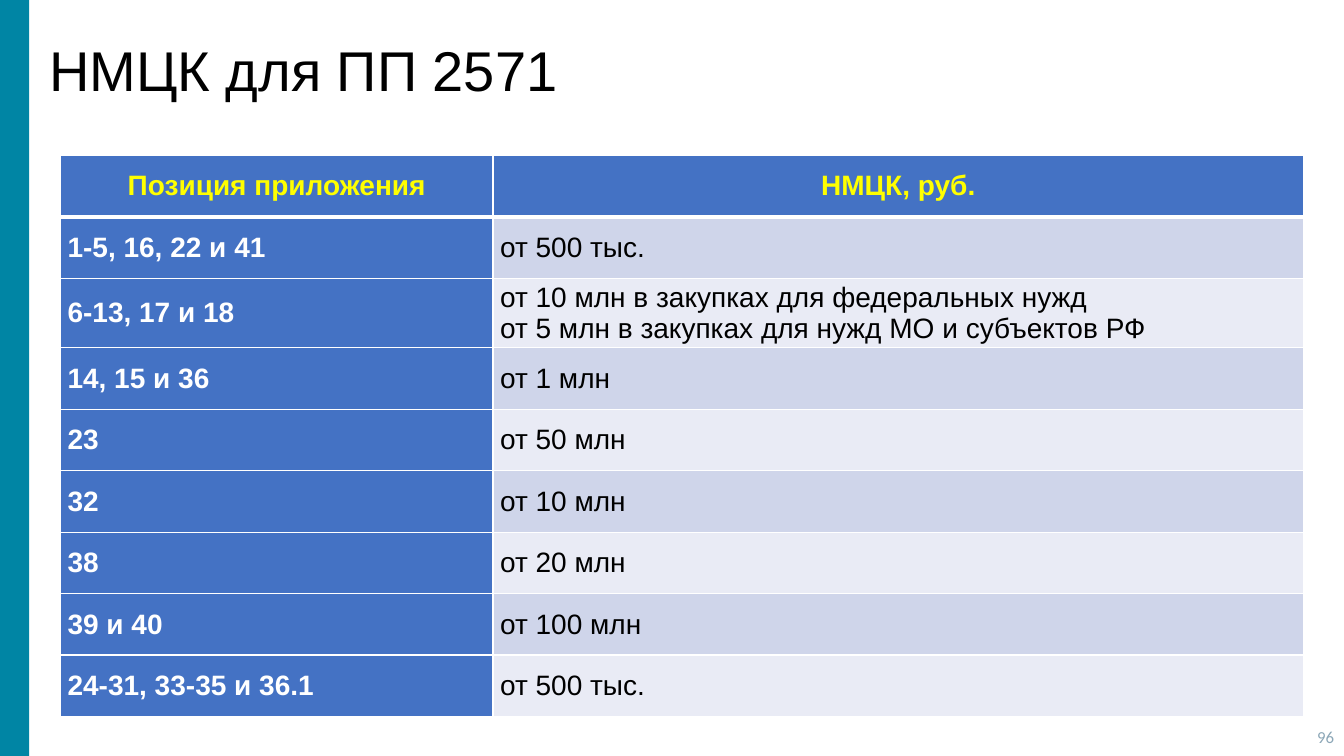
from dataclasses import dataclass

from lxml.etree import SubElement
from pptx import Presentation
from pptx.dml.color import RGBColor as RGB
from pptx.enum.shapes import MSO_SHAPE as SHAPE
from pptx.enum.text import MSO_ANCHOR as ANCHOR, PP_ALIGN as ALIGN
from pptx.oxml.ns import qn
from pptx.util import Inches, Pt


@dataclass(frozen=True)
class Theme:
    band: str = "0085A4"
    accent: str = "4472C4"
    stripes: tuple[str, str] = ("CFD5EA", "E9EBF5")
    heading: str = "FFFF00"
    light: str = "FFFFFF"
    dark: str = "000000"
    muted: str = "8CA7B7"
    font: str = "Arial"
    number_font: str = "Calibri"
    title_size: int = 40
    table_size: int = 20
    number_size: int = 12
    grid_width: int = 1
    header_rule: int = 3


@dataclass(frozen=True)
class TextStyle:
    size: int
    color: str
    font: str
    bold: bool = False
    align: ALIGN = ALIGN.LEFT
    spacing: float = 1.0


@dataclass(frozen=True)
class Label:
    text: str
    box: tuple[float, float, float, float]
    style: TextStyle


@dataclass(frozen=True)
class PriceRow:
    positions: str
    price: str
    height: float = 0.61


THEME = Theme()
HEADER = TextStyle(THEME.table_size, THEME.heading, THEME.font, True, ALIGN.CENTER)
POSITION = TextStyle(THEME.table_size, THEME.light, THEME.font, True)
PRICE = TextStyle(THEME.table_size, THEME.dark, THEME.font)

LABELS = [
    Label("96", (10.33, 7.11, 3, 0.4),
          TextStyle(THEME.number_size, THEME.muted, THEME.number_font, align=ALIGN.RIGHT)),
    Label("НМЦК для ПП 2571", (0.39, 0.3, 8.61, 0.85),
          TextStyle(THEME.title_size, THEME.dark, THEME.font, spacing=0.9)),
]
ROWS = [
    PriceRow("Позиция приложения", "НМЦК, руб."),
    PriceRow("1-5, 16, 22 и 41", "от 500 тыс."),
    PriceRow("6-13, 17 и 18",
             "от 10 млн в закупках для федеральных нужд\n"
             "от 5 млн в закупках для нужд МО и субъектов РФ", 0.69),
    PriceRow("14, 15 и 36", "от 1 млн"),
    PriceRow("23", "от 50 млн"),
    PriceRow("32", "от 10 млн"),
    PriceRow("38", "от 20 млн"),
    PriceRow("39 и 40", "от 100 млн"),
    PriceRow("24-31, 33-35 и 36.1", "от 500 тыс."),
]
COLUMN_WIDTHS = (4.29, 8.04)


def write_text(tf, text: str, style: TextStyle) -> None:
    tf.text = text
    formats = {"size": Pt(style.size), "name": style.font, "bold": style.bold}
    for p in tf.paragraphs:
        p.alignment = style.align
        p.line_spacing = style.spacing
        for r in p.runs:
            for name, value in formats.items():
                setattr(r.font, name, value)
            r.font.color.rgb = RGB.from_string(style.color)


def add_label(s, label: Label) -> None:
    tf = s.shapes.add_textbox(*map(Inches, label.box)).text_frame
    tf.word_wrap = True
    tf.vertical_anchor = ANCHOR.MIDDLE
    write_text(tf, label.text, label.style)


def add_band(s) -> None:
    sp = s.shapes.add_shape(SHAPE.RECTANGLE, 0, 0, Inches(0.29), Inches(7.5))
    sp.shadow.inherit = False
    sp.fill.solid()
    sp.fill.fore_color.rgb = RGB.from_string(THEME.band)
    sp.line.fill.background()


def set_borders(cell, widths: dict[str, int]) -> None:
    tc_pr = cell._tc.get_or_add_tcPr()
    for side, width in widths.items():
        ln = SubElement(tc_pr, qn(f"a:{side}"), w=str(Pt(width)))
        fill = SubElement(ln, qn("a:solidFill"))
        SubElement(fill, qn("a:srgbClr"), val=THEME.light)


def format_cell(cell, text: str, style: TextStyle, fill: str, row: int) -> None:
    formats = {
        "vertical_anchor": ANCHOR.MIDDLE,
        "margin_left": Inches(0.07),
        "margin_right": Inches(0.07),
        "margin_top": 0,
        "margin_bottom": 0,
    }
    for name, value in formats.items():
        setattr(cell, name, value)
    grid, rule = THEME.grid_width, THEME.header_rule
    set_borders(cell, {
        "lnL": grid,
        "lnR": grid,
        "lnT": rule if row == 1 else grid,
        "lnB": rule if row == 0 else grid,
    })
    cell.fill.solid()
    cell.fill.fore_color.rgb = RGB.from_string(fill)
    write_text(cell.text_frame, text, style)


def add_price_table(s, rows: list[PriceRow]) -> None:
    height = sum(row.height for row in rows)
    table = s.shapes.add_table(
        len(rows), len(COLUMN_WIDTHS), Inches(0.6), Inches(1.54),
        Inches(sum(COLUMN_WIDTHS)), Inches(height)).table
    for column, width in zip(table.columns, COLUMN_WIDTHS):
        column.width = Inches(width)
    for i, row in enumerate(rows):
        table.rows[i].height = Inches(row.height)
        left, right = (POSITION, PRICE) if i else (HEADER, HEADER)
        stripe = THEME.stripes[(i - 1) % 2] if i else THEME.accent
        format_cell(table.cell(i, 0), row.positions, left, THEME.accent, i)
        format_cell(table.cell(i, 1), row.price, right, stripe, i)


def main() -> None:
    prs = Presentation()
    prs.slide_width, prs.slide_height = Inches(13.33), Inches(7.5)
    s = prs.slides.add_slide(prs.slide_layouts[6])
    add_band(s)
    for label in LABELS:
        add_label(s, label)
    add_price_table(s, ROWS)
    prs.save("out.pptx")


if __name__ == "__main__":
    main()
